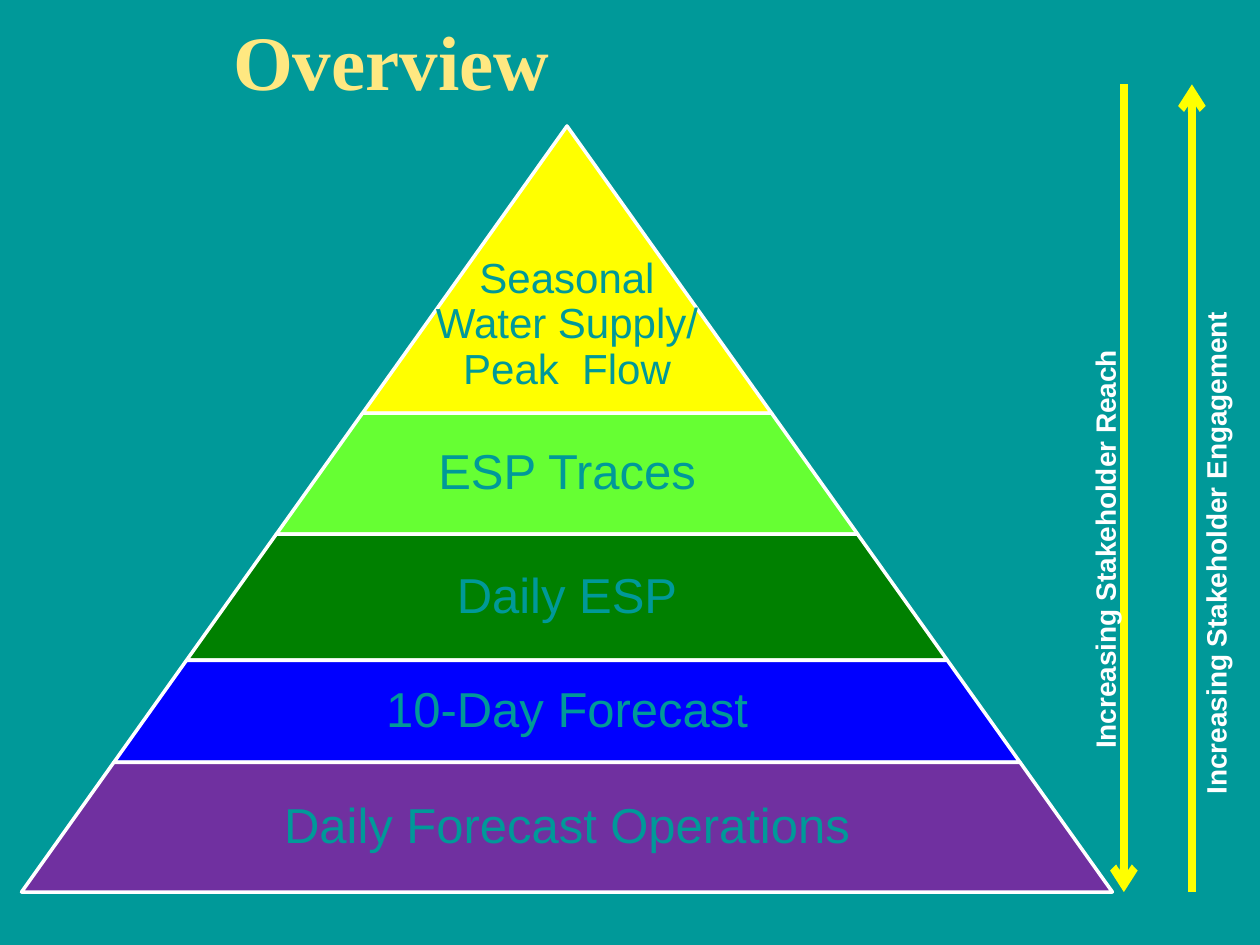
"""Build the Overview slide: a forecast pyramid with two stakeholder arrows."""
from dataclasses import dataclass

from lxml.etree import SubElement
from pptx import Presentation
from pptx.dml.color import RGBColor
from pptx.enum.shapes import MSO_CONNECTOR as Connector, MSO_SHAPE as Shape
from pptx.enum.text import MSO_ANCHOR as Anchor, MSO_AUTO_SIZE as AutoSize, PP_ALIGN as Align
from pptx.oxml.ns import qn
from pptx.shapes.group import GroupShape
from pptx.slide import Slide
from pptx.text.text import TextFrame
from pptx.util import Inches, Pt

COLORS = {
    "teal": "009999", "cream": "FFE881", "white": "FFFFFF", "yellow": "FFFF00",
    "lime": "66FF33", "green": "008000", "blue": "0000FF", "purple": "7030A0",
}
CENTER_X = 4.5
APEX_Y = 1.0
BASE_Y = 7.08
SLOPE = 0.712
ARROW_TOP = 0.67


@dataclass
class Band:
    text: str
    bottom: float
    color: str
    size: int = 28
    label_share: float = 0.65
    anchor: Anchor = Anchor.MIDDLE
    inset: float = 0.04
    bottom_inset: float = 0.04


@dataclass
class Trend:
    text: str
    x: float
    start: float
    end: float
    label_x: float
    label_y: float
    label_length: float


BANDS = [
    Band("Seasonal\nWater Supply/\nPeak  Flow", 3.28, "yellow", 24, 1, Anchor.BOTTOM, 0.03, 0.16),
    Band("ESP Traces", 4.24, "lime"),
    Band("Daily ESP", 5.24, "green"),
    Band("10-Day Forecast", 6.05, "blue"),
    Band("Daily Forecast Operations", BASE_Y, "purple"),
]
TRENDS = [
    Trend("Increasing Stakeholder Reach", 8.92, ARROW_TOP, BASE_Y, 8.77, 4.36, 3.4),
    Trend("Increasing Stakeholder Engagement", 9.46, BASE_Y, ARROW_TOP, 9.65, 4.39, 4.14),
]


def rgb(name: str) -> RGBColor:
    return RGBColor.from_string(COLORS[name])


def format_text(frame: TextFrame, font_name: str, size: int, color: str, align: Align,
                bold: bool = False, spacing: float = 1.0) -> None:
    for paragraph in frame.paragraphs:
        paragraph.alignment = align
        paragraph.line_spacing = spacing
        for run in paragraph.runs:
            run.font.name = font_name
            run.font.size = Pt(size)
            run.font.bold = bold
            run.font.color.rgb = rgb(color)


def add_title(slide: Slide, text: str) -> None:
    title = slide.shapes.title
    title.left, title.top = Inches(1.75), Inches(0.17)
    title.width, title.height = Inches(7.33), Inches(0.58)
    frame = title.text_frame
    frame.text = text
    frame.auto_size = AutoSize.NONE
    frame.vertical_anchor = Anchor.TOP
    format_text(frame, "Times New Roman", 44, "cream", Align.LEFT, True, 0.85)


def add_band(group: GroupShape, band: Band, top: float) -> None:
    width = 2 * SLOPE * (band.bottom - APEX_Y)
    height = band.bottom - top
    shape = group.shapes.add_shape(Shape.TRAPEZOID, Inches(CENTER_X - width / 2), Inches(top),
                                   Inches(width), Inches(height))
    shape.adjustments[0] = SLOPE
    shape.shadow.inherit = False
    shape.fill.solid()
    shape.fill.fore_color.rgb = rgb(band.color)
    shape.line.color.rgb = rgb("white")
    shape.line.width = Pt(2)

    label_width = width * band.label_share
    label = group.shapes.add_textbox(Inches(CENTER_X - label_width / 2), Inches(top),
                                     Inches(label_width), Inches(height))
    frame = label.text_frame
    frame.word_wrap = True
    frame.vertical_anchor = band.anchor
    frame.margin_left = frame.margin_right = frame.margin_top = Inches(band.inset)
    frame.margin_bottom = Inches(band.bottom_inset)
    frame.text = band.text
    format_text(frame, "Arial", band.size, "teal", Align.CENTER, spacing=0.9)


def add_trend(slide: Slide, trend: Trend) -> None:
    arrow = slide.shapes.add_connector(Connector.STRAIGHT, Inches(trend.x), Inches(trend.start),
                                       Inches(trend.x), Inches(trend.end))
    arrow.line.color.rgb = rgb("yellow")
    arrow.line.width = Pt(4.5)
    SubElement(arrow.line._get_or_add_ln(), qn("a:tailEnd"), type="arrow")
    SubElement(arrow._element.spPr, qn("a:effectLst"))

    height = 0.37
    label = slide.shapes.add_textbox(Inches(trend.label_x - trend.label_length / 2),
                                     Inches(trend.label_y - height / 2),
                                     Inches(trend.label_length), Inches(height))
    label.rotation = 270
    frame = label.text_frame
    frame.word_wrap = False
    frame.auto_size = AutoSize.SHAPE_TO_FIT_TEXT
    frame.text = trend.text
    format_text(frame, "Arial", 16, "white", Align.CENTER, True)


def main() -> None:
    presentation = Presentation()
    presentation.slide_width, presentation.slide_height = Inches(10), Inches(7.5)
    slide = presentation.slides.add_slide(presentation.slide_layouts[5])
    slide.background.fill.solid()
    slide.background.fill.fore_color.rgb = rgb("teal")
    add_title(slide, "Overview")
    pyramid = slide.shapes.add_group_shape()
    top = APEX_Y
    for band in BANDS:
        add_band(pyramid, band, top)
        top = band.bottom
    for trend in TRENDS:
        add_trend(slide, trend)
    presentation.save("out.pptx")


if __name__ == "__main__":
    main()
